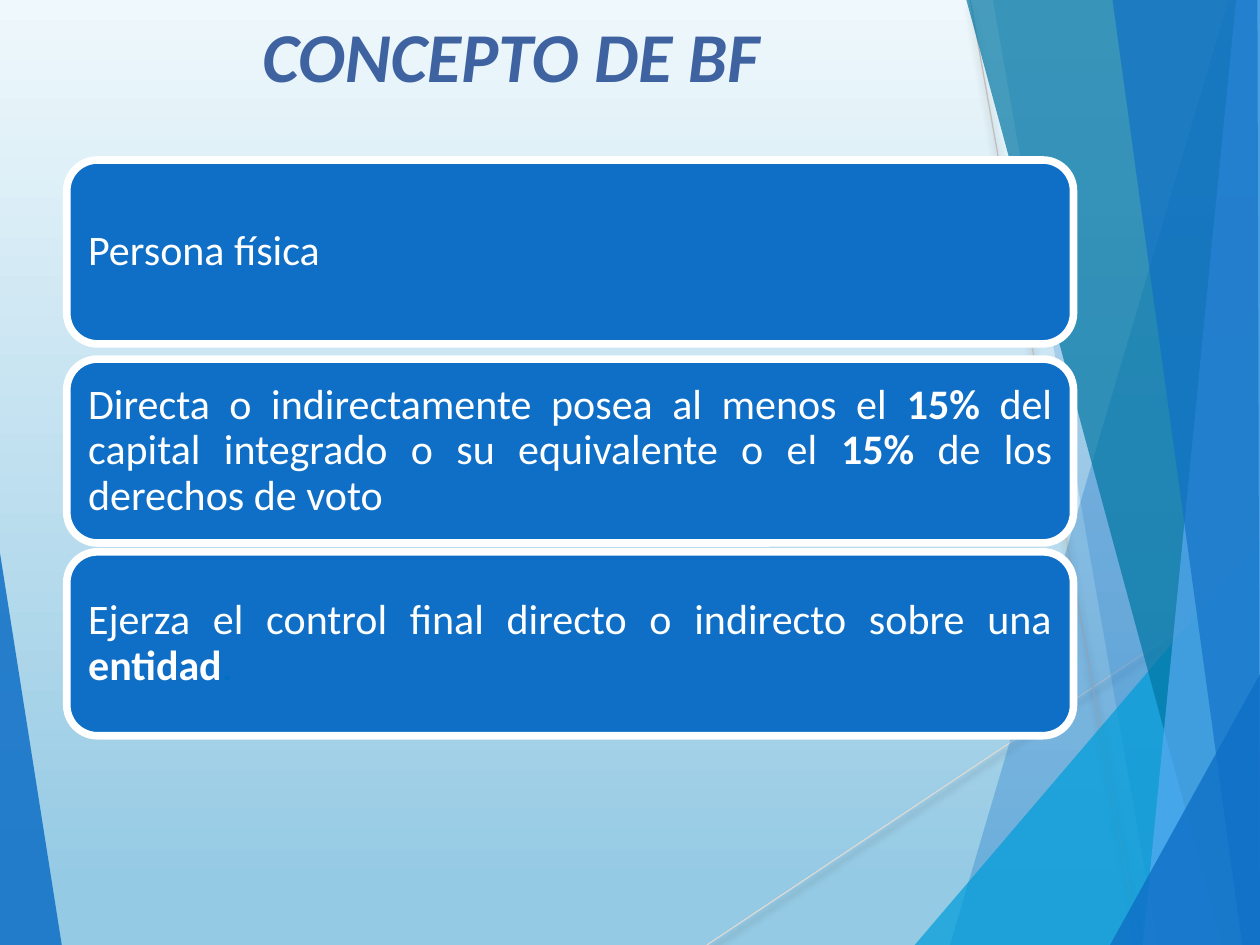
from lxml import etree
from pptx import Presentation
from pptx.dml.color import RGBColor
from pptx.enum.shapes import MSO_CONNECTOR, MSO_SHAPE
from pptx.enum.text import MSO_ANCHOR, PP_ALIGN
from pptx.oxml.ns import qn
from pptx.util import Inches, Pt

STRAIGHT = MSO_CONNECTOR.STRAIGHT
ROUNDED = MSO_SHAPE.ROUNDED_RECTANGLE
MIDDLE = MSO_ANCHOR.MIDDLE
CENTER, JUSTIFY = PP_ALIGN.CENTER, PP_ALIGN.JUSTIFY

WIDTH, HEIGHT = 10, 7.5
FONT = "Calibri"
COLORS = {
    "sky_top": "EFF8FC", "sky_bottom": "95CAE4",
    "blue": "0F6FC6", "cyan": "009DD9", "teal": "0076A3", "light_blue": "59AAF2",
    "pale_gray": "D9D9D9", "gray": "BFBFBF", "black": "000000",
    "title": "3F63A1", "white": "FFFFFF", "period": "0070C0",
}

# Facets: colour, opacity in percent, corners in inches
LEFT_FACET = ("blue", 85, [(0, 4.39), (0.49, HEIGHT), (0, HEIGHT)])
RIGHT_FACETS = [
    ("blue", 30, [(9.75, 0), (7.54, HEIGHT), (WIDTH, HEIGHT), (WIDTH, 0)]),
    ("blue", 20, [(7.88, 0), (9.19, HEIGHT), (WIDTH, HEIGHT), (WIDTH, 0)]),
    ("cyan", 72, [(7.26, HEIGHT), (WIDTH, 4.29), (WIDTH, HEIGHT)]),
    ("teal", 70, [(7.67, 0), (9.7, HEIGHT), (WIDTH, HEIGHT), (WIDTH, 0)]),
    ("light_blue", 70, [(9.81, 0), (9.07, HEIGHT), (WIDTH, HEIGHT), (WIDTH, 0)]),
    ("blue", 65, [(8.83, 0), (9.86, HEIGHT), (WIDTH, HEIGHT), (9.98, 0)]),
    ("blue", 80, [(8.81, HEIGHT), (WIDTH, 5.35), (WIDTH, HEIGHT)]),
]
RAYS = [
    ("pale_gray", (5.61, HEIGHT), (WIDTH, 4.57)),
    ("gray", (7.7, 0), (9.04, HEIGHT)),
]

# Cards: top, then runs of text, bold flag and colour
CARDS = [
    (1.27, [("Persona física", False, "white")]),
    (2.85, [("Directa o indirectamente posea al menos el ", False, "white"),
            ("15%", True, "white"),
            (" del capital integrado o su equivalente o el ", False, "white"),
            ("15%", True, "white"),
            (" de los derechos de voto", False, "white")]),
    (4.38, [("Ejerza el control final directo o indirecto sobre una ", False, "white"),
            ("entidad", True, "white"),
            (".", False, "period")]),
]


def rgb(name):
    return RGBColor.from_string(COLORS[name])


def set_alpha(color_element, percent):
    etree.SubElement(color_element, qn("a:alpha"), val=str(percent * 1000))


def paint_background(slide):
    fill = slide.background.fill
    fill.gradient()
    fill.gradient_angle = 270
    for stop, name, position in zip(fill.gradient_stops,
                                    ("sky_top", "sky_bottom"), (0, 0.94)):
        stop.color.rgb = rgb(name)
        stop.position = position


def add_facet(slide, color, opacity, corners):
    start, *others = [(Inches(x), Inches(y)) for x, y in corners]
    builder = slide.shapes.build_freeform(*start)
    builder.add_line_segments(others, close=True)
    facet = builder.convert_to_shape()
    facet.shadow.inherit = False
    facet.fill.solid()
    facet.fill.fore_color.rgb = rgb(color)
    set_alpha(facet._element.spPr.find(".//" + qn("a:srgbClr")), opacity)
    facet.line.fill.background()


def add_ray(slide, color, start, end):
    ray = slide.shapes.add_connector(STRAIGHT, *map(Inches, start + end))
    ray.line.color.rgb = rgb(color)
    ray.line.width = Pt(0.75)
    # Soft shadow straight below the line
    effects = etree.SubElement(ray._element.spPr, qn("a:effectLst"))
    shadow = etree.SubElement(effects, qn("a:outerShdw"), blurRad=str(Pt(4)),
                              dist=str(Pt(3)), dir="5400000", rotWithShape="0")
    set_alpha(etree.SubElement(shadow, qn("a:srgbClr"), val=COLORS["black"]), 35)


def add_title(slide, text):
    box = slide.shapes.add_textbox(Inches(0.51), Inches(0.05), Inches(7.09), Inches(0.77))
    box.text_frame.word_wrap = True
    title = box.text_frame.paragraphs[0]
    title.text = text
    title.alignment = CENTER
    title.space_before = Pt(20)
    title.font.name, title.font.size = FONT, Pt(40)
    title.font.bold = title.font.italic = True
    title.font.color.rgb = rgb("title")


def add_card(slide, top, runs):
    card = slide.shapes.add_shape(ROUNDED, Inches(0.53), Inches(top),
                                  Inches(7.99), Inches(1.46))
    card.shadow.inherit = False
    card.fill.solid()
    card.fill.fore_color.rgb = rgb("blue")
    card.line.color.rgb = rgb("white")
    card.line.width = Pt(4.33)

    frame = card.text_frame
    frame.word_wrap = True
    frame.vertical_anchor = MIDDLE
    frame.margin_left = frame.margin_right = Inches(0.1)
    frame.margin_top = frame.margin_bottom = Inches(0.1)
    statement = frame.paragraphs[0]
    statement.alignment = JUSTIFY
    statement.line_spacing = 0.9
    statement.font.name, statement.font.size = FONT, Pt(24)
    for text, bold, color in runs:
        run = statement.add_run()
        run.text = text
        run.font.bold = bold
        run.font.color.rgb = rgb(color)


def main():
    prs = Presentation()
    prs.slide_width, prs.slide_height = Inches(WIDTH), Inches(HEIGHT)
    slide = prs.slides.add_slide(prs.slide_layouts[6])

    # Backdrop
    paint_background(slide)
    add_facet(slide, *LEFT_FACET)
    for ray in RAYS:
        add_ray(slide, *ray)
    for facet in RIGHT_FACETS:
        add_facet(slide, *facet)

    # Content
    add_title(slide, "CONCEPTO DE BF")
    for card in CARDS:
        add_card(slide, *card)

    prs.save("out.pptx")


if __name__ == "__main__":
    main()
